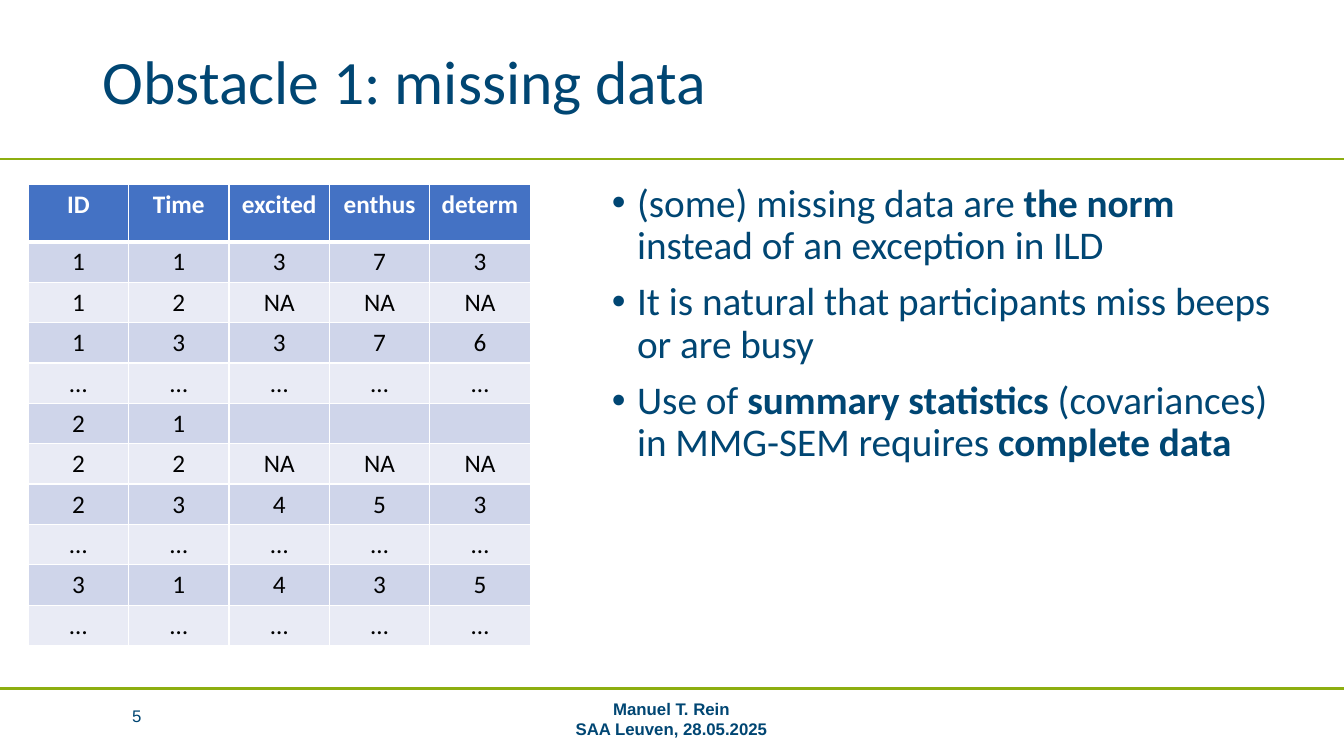
from lxml.etree import SubElement
from pptx import Presentation
from pptx.dml.color import RGBColor
from pptx.enum.shapes import MSO_CONNECTOR
from pptx.enum.text import MSO_ANCHOR, MSO_AUTO_SIZE, PP_ALIGN
from pptx.oxml.ns import qn
from pptx.util import Inches, Pt

NAVY, GREEN, WHITE, BLACK = "004673", "8DAE10", "FFFFFF", "000000"
HEADER_FILL, BAND_FILLS = "4472C4", ("CFD5EA", "E9EBF5")
TITLE_FONT = {"name": "Calibri", "size": Pt(44), "bold": False}
BODY_FONT = {"name": "Calibri", "size": Pt(28)}
TABLE_FONT = {"name": "Calibri", "size": Pt(18)}
FOOTER_FONT = {"name": "Arial", "size": Pt(12)}
NO_MARGINS = dict.fromkeys(
    ("margin_left", "margin_top", "margin_right", "margin_bottom"), 0)

OBSERVATIONS = [
    ("ID", "Time", "excited", "enthus", "determ"),
    ("1", "1", "3", "7", "3"),
    ("1", "2", "NA", "NA", "NA"),
    ("1", "3", "3", "7", "6"),
    ("…",) * 5,
    ("2", "1", "", "", ""),
    ("2", "2", "NA", "NA", "NA"),
    ("2", "3", "4", "5", "3"),
    ("…",) * 5,
    ("3", "1", "4", "3", "5"),
    ("…",) * 5,
]

# Each point is a list of text pieces; every second piece is bold.
POINTS = [
    ["(some) missing data are ", "the norm", " instead of an exception in ILD"],
    ["It is natural that participants miss beeps or are busy"],
    ["Use of ", "summary statistics",
     " (covariances) in MMG-SEM requires ", "complete data"],
]


def rgb(hex_color):
    return RGBColor.from_string(hex_color)


def assign(target, values):
    for name, value in values.items():
        setattr(target, name, value)


class SlideBuilder:
    def __init__(self, slide):
        self.slide = slide

    def add_text(self, paragraph, text, font, color=NAVY, **extra):
        run = paragraph.add_run()
        run.text = text
        assign(run.font, {**font, **extra})
        run.font.color.rgb = rgb(color)

    def title(self, text, left, top, width, height):
        title = self.slide.shapes.title
        assign(title, {"left": Inches(left), "top": Inches(top),
                       "width": Inches(width), "height": Inches(height)})
        assign(title.text_frame, {"auto_size": MSO_AUTO_SIZE.NONE,
                                  "vertical_anchor": MSO_ANCHOR.MIDDLE})
        paragraph = title.text_frame.paragraphs[0]
        assign(paragraph, {"alignment": PP_ALIGN.LEFT, "line_spacing": 0.9})
        self.add_text(paragraph, text, TITLE_FONT)

    def text_frame(self, left, top, width, height, **settings):
        box = self.slide.shapes.add_textbox(
            Inches(left), Inches(top), Inches(width), Inches(height))
        assign(box.text_frame, {"word_wrap": True, **settings})
        return box.text_frame

    def footer(self, lines, left, top, width, height, bold=False):
        frame = self.text_frame(left, top, width, height,
                                vertical_anchor=MSO_ANCHOR.MIDDLE, **NO_MARGINS)
        for index, line in enumerate(lines):
            paragraph = frame.add_paragraph() if index else frame.paragraphs[0]
            paragraph.alignment = PP_ALIGN.CENTER
            self.add_text(paragraph, line, FOOTER_FONT, bold=bold)

    def bullets(self, points, left, top, width, height):
        frame = self.text_frame(left, top, width, height)
        for index, pieces in enumerate(points):
            paragraph = frame.add_paragraph() if index else frame.paragraphs[0]
            assign(paragraph, {"line_spacing": 0.9, "space_before": Pt(10)})
            properties = paragraph._p.get_or_add_pPr()
            properties.set("marL", str(Inches(0.25)))
            properties.set("indent", str(-Inches(0.25)))
            SubElement(properties, qn("a:buFont"), typeface="Arial")
            SubElement(properties, qn("a:buChar"), char="•")
            for position, piece in enumerate(pieces):
                self.add_text(paragraph, piece, BODY_FONT, bold=position % 2 == 1)

    def rule(self, y, width):
        """Draw a horizontal line across the slide."""
        line = self.slide.shapes.add_connector(
            MSO_CONNECTOR.STRAIGHT, 0, Inches(y), width, Inches(y))
        line.line.color.rgb = rgb(GREEN)
        line.line.width = Pt(1.5)
        SubElement(line._element.spPr, qn("a:effectLst"))

    def borders(self, cell, widths):
        """Give the cell white borders, with widths in points by side."""
        properties = cell._tc.get_or_add_tcPr()
        for side, width in widths.items():
            border = SubElement(properties, qn(f"a:ln{side}"), w=str(Pt(width)))
            fill = SubElement(border, qn("a:solidFill"))
            SubElement(fill, qn("a:srgbClr"), val=WHITE)

    def table(self, rows, left, top, width, header_height, row_height):
        height = header_height + row_height * (len(rows) - 1)
        table = self.slide.shapes.add_table(
            len(rows), len(rows[0]), Inches(left), Inches(top),
            Inches(width), Inches(height)).table
        for row_index, values in enumerate(rows):
            header = row_index == 0
            table.rows[row_index].height = Inches(
                header_height if header else row_height)
            fill = HEADER_FILL if header else BAND_FILLS[(row_index - 1) % 2]
            widths = {"L": 1, "R": 1, "T": 3 if row_index == 1 else 1,
                      "B": 3 if header else 1}
            for column, value in enumerate(values):
                cell = table.cell(row_index, column)
                self.borders(cell, widths)
                cell.fill.solid()
                cell.fill.fore_color.rgb = rgb(fill)
                paragraph = cell.text_frame.paragraphs[0]
                paragraph.alignment = PP_ALIGN.CENTER
                if value:
                    self.add_text(paragraph, value, TABLE_FONT,
                                  WHITE if header else BLACK, bold=header)


def main():
    deck = Presentation()
    deck.slide_width, deck.slide_height = Inches(13.33), Inches(7.5)
    builder = SlideBuilder(deck.slides.add_slide(deck.slide_layouts[5]))
    builder.footer(["Manuel T. Rein", "SAA Leuven, 28.05.2025"],
                   3.8, 6.93, 5.72, 0.4, bold=True)
    builder.footer(["5 "], 0.92, 6.9, 0.92, 0.4)
    for y in (6.83, 1.58):
        builder.rule(y, deck.slide_width)
    builder.title("Obstacle 1: missing data", 0.92, 0.26, 11.5, 1.16)
    builder.table(OBSERVATIONS, 0.28, 1.83, 4.98, 0.57, 0.4)
    builder.bullets(POINTS, 5.97, 1.77, 6.92, 4.76)
    deck.save("out.pptx")


if __name__ == "__main__":
    main()
